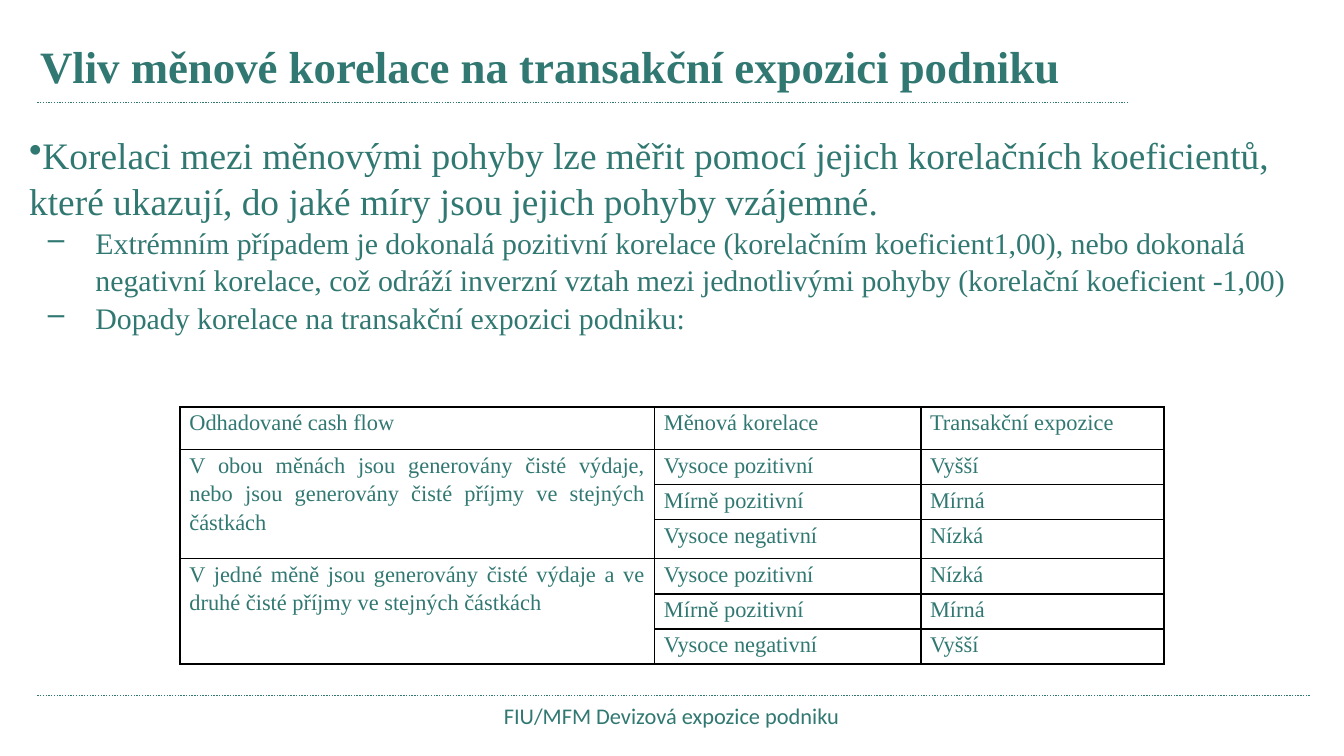
from lxml import etree
from pptx import Presentation
from pptx.dml.color import RGBColor
from pptx.enum import dml, shapes, text
from pptx.oxml.ns import qn
from pptx.util import Pt

GREEN = "307871"
SERIF = "Times New Roman"
WIDTHS = [254.2, 142.6, 130.3]
HEIGHTS = [22.8, 18.8, 18.8, 20.9, 18.8, 18.8, 18.8]
HEAD = ["Odhadované cash flow", "Měnová korelace", "Transakční expozice"]
LEVELS = ["Vysoce pozitivní", "Mírně pozitivní", "Vysoce negativní"]
CASES = [
    ("V obou měnách jsou generovány čisté výdaje, nebo jsou generovány "
     "čisté příjmy ve stejných částkách", ["Vyšší", "Mírná", "Nízká"]),
    ("V jedné měně jsou generovány čisté výdaje a ve druhé čisté příjmy "
     "ve stejných částkách", ["Nízká", "Mírná", "Vyšší"]),
]
POINTS = [
    "Extrémním případem je dokonalá pozitivní korelace (korelačním "
    "koeficient1,00), nebo dokonalá negativní korelace, což odráží inverzní "
    "vztah mezi jednotlivými pohyby (korelační koeficient -1,00)",
    "Dopady korelace na transakční expozici podniku:",
]


def color(code):
    return RGBColor.from_string(code)


def write(par, words, size=12, font=SERIF, bold=False, align=None,
          space=None, mark=None, left=0, hang=0):
    if mark:
        props = par._p.get_or_add_pPr()
        props.set("marL", str(Pt(left)))
        props.set("indent", str(Pt(-hang)))
        etree.SubElement(props, qn("a:buChar")).set("char", mark)
    par.alignment = align
    par.line_spacing = space
    run = par.add_run()
    run.text = words
    run.font.size = Pt(size)
    run.font.name = font
    run.font.bold = bold
    run.font.color.rgb = color(GREEN)


def add_box(slide, x, y, w, h, anchor=text.MSO_ANCHOR.TOP):
    frame = slide.shapes.add_textbox(Pt(x), Pt(y), Pt(w), Pt(h)).text_frame
    frame.word_wrap = True
    frame.vertical_anchor = anchor
    return frame


def add_rule(slide, x, y, end):
    rule = slide.shapes.add_connector(
        shapes.MSO_CONNECTOR.STRAIGHT, Pt(x), Pt(y), Pt(end), Pt(y))
    rule.line.color.rgb = color(GREEN)
    rule.line.width = Pt(0.75)
    rule.line.dash_style = dml.MSO_LINE.ROUND_DOT
    etree.SubElement(rule._element.spPr, qn("a:effectLst"))


def style_cell(cell):
    cell.margin_left = cell.margin_right = Pt(5)
    cell.margin_top = cell.margin_bottom = 0
    props = cell._tc.get_or_add_tcPr()
    for side in ("lnL", "lnR", "lnT", "lnB"):
        line = etree.SubElement(props, qn("a:" + side), w=str(Pt(1)))
        fill = etree.SubElement(line, qn("a:solidFill"))
        etree.SubElement(fill, qn("a:srgbClr"), val="000000")
    cell.fill.background()


def add_grid(slide, x, y):
    grid = slide.shapes.add_table(
        len(HEIGHTS), len(WIDTHS), Pt(x), Pt(y),
        Pt(sum(WIDTHS)), Pt(sum(HEIGHTS))).table
    grid.first_row = grid.horz_banding = False
    for col, width in zip(grid.columns, WIDTHS):
        col.width = Pt(width)
    for row, height in zip(grid.rows, HEIGHTS):
        row.height = Pt(height)
    rows = [HEAD]
    for case, risks in CASES:
        top = len(rows)
        grid.cell(top, 0).merge(grid.cell(top + 2, 0))
        names = [case, None, None]
        rows += zip(names, LEVELS, risks)
    for r, row in enumerate(rows):
        for c, words in enumerate(row):
            cell = grid.cell(r, c)
            style_cell(cell)
            if words:
                write(cell.text_frame.paragraphs[0], words,
                      align=text.PP_ALIGN.JUSTIFY, space=1.15)


def main():
    deck = Presentation()
    deck.slide_width, deck.slide_height = Pt(720), Pt(405)
    slide = deck.slides.add_slide(deck.slide_layouts[6])
    add_rule(slide, 20, 55, 604)
    add_rule(slide, 20, 372.5, 702)

    body = add_box(slide, 8.6, 66.2, 698, 150)
    write(body.paragraphs[0],
          "Korelaci mezi měnovými pohyby lze měřit pomocí jejich korelačních "
          "koeficientů, které ukazují, do jaké míry jsou jejich pohyby "
          "vzájemné.", size=20, mark="•", space=1.04)
    for point in POINTS:
        write(body.add_paragraph(), point, size=16, mark="–",
              left=35.5, hang=25.5, space=1.04)

    title = add_box(slide, 14.4, 15, 584, 40, text.MSO_ANCHOR.MIDDLE)
    write(title.paragraphs[0],
          "Vliv měnové korelace na transakční expozici podniku",
          size=24, bold=True)
    foot = add_box(slide, 22.3, 372.5, 675, 22)
    write(foot.paragraphs[0], "FIU/MFM Devizová expozice podniku",
          font="Calibri", align=text.PP_ALIGN.CENTER)
    add_grid(slide, 96.5, 218)
    deck.save("out.pptx")


if __name__ == "__main__":
    main()
